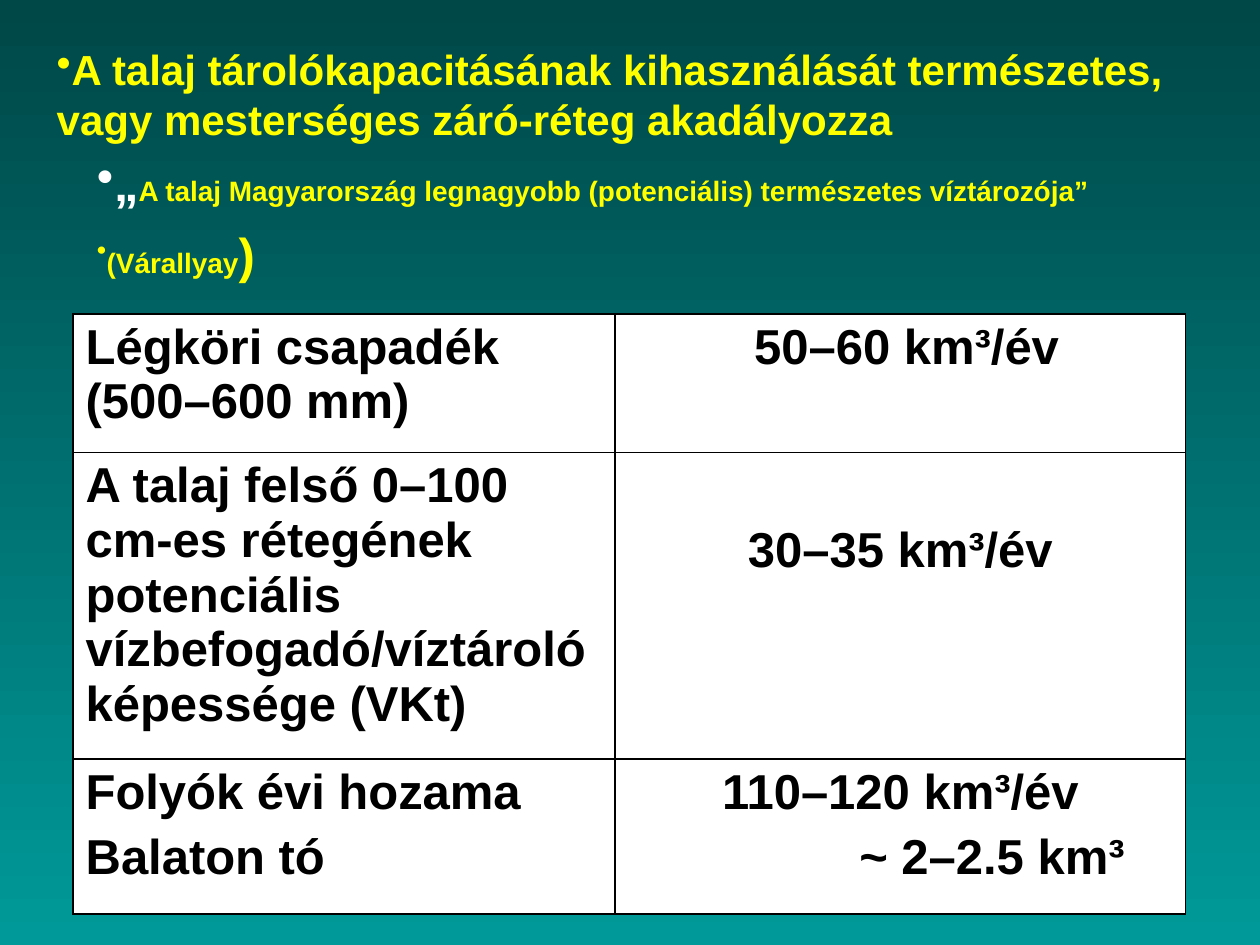
from lxml.etree import SubElement
from pptx import Presentation
from pptx.dml.color import RGBColor
from pptx.enum.text import MSO_ANCHOR as Anchor, MSO_AUTO_SIZE as AutoSize, PP_ALIGN as Align
from pptx.oxml.ns import qn
from pptx.util import Inches, Pt

COLORS = {
    "top": "004747",
    "bottom": "009999",
    "accent": "FFFF00",
    "white": "FFFFFF",
    "black": "000000",
}
FONT = "Arial"
BODY = {"size": 28, "color": "black"}
QUOTE = {"size": 16, "color": "accent"}


def rgb(name):
    return RGBColor.from_string(COLORS[name])


def add_run(paragraph, text, size, color):
    run = paragraph.add_run()
    run.text = text
    formats = {"name": FONT, "size": Pt(size), "bold": True}
    for attribute, value in formats.items():
        setattr(run.font, attribute, value)
    run.font.color.rgb = rgb(color)


def add_bullet(paragraph):
    """Put a bullet directly before the text, without a hanging indent."""
    properties = paragraph._p.get_or_add_pPr()
    properties.set("marL", "0")
    properties.set("indent", "0")
    SubElement(properties, qn("a:buChar"), char="•")


def paint_background(slide):
    fill = slide.background.fill
    fill.gradient()
    fill.gradient_angle = 270
    for stop, position, color in zip(fill.gradient_stops, (0, 1), ("top", "bottom")):
        stop.position = position
        stop.color.rgb = rgb(color)


def place_title(slide, text):
    title = slide.shapes.title
    title.left, title.top = Inches(0.35), Inches(0.29)
    title.width, title.height = Inches(9.65), Inches(0.91)
    frame = title.text_frame
    frame.auto_size = AutoSize.NONE
    frame.vertical_anchor = Anchor.MIDDLE
    paragraph = frame.paragraphs[0]
    add_bullet(paragraph)
    paragraph.alignment = Align.LEFT
    add_run(paragraph, text, 24, "accent")


def add_quote(slide, lines):
    box = slide.shapes.add_textbox(Inches(0.67), Inches(1.23), Inches(8.5), Inches(1))
    frame = box.text_frame
    frame.word_wrap = True
    frame.vertical_anchor = Anchor.MIDDLE
    for index, runs in enumerate(lines):
        paragraph = frame.add_paragraph() if index else frame.paragraphs[0]
        add_bullet(paragraph)
        if index:
            paragraph.space_before = Pt(7)
        for text, style in runs:
            add_run(paragraph, text, **style)


def add_borders(cell):
    properties = cell._tc.get_or_add_tcPr()
    for side in ("lnL", "lnR", "lnT", "lnB"):
        line = SubElement(properties, qn(f"a:{side}"), w=str(Pt(1)))
        fill = SubElement(line, qn("a:solidFill"))
        SubElement(fill, qn("a:srgbClr"), val=COLORS["black"])


def fill_cell(cell, lines, gap=5.6, align=Align.LEFT):
    add_borders(cell)
    cell.fill.solid()
    cell.fill.fore_color.rgb = rgb("white")
    for index, text in enumerate(lines):
        frame = cell.text_frame
        paragraph = frame.add_paragraph() if index else frame.paragraphs[0]
        paragraph.alignment = align
        if index:
            paragraph.space_before = Pt(gap)
        add_run(paragraph, text, **BODY)


def add_water_table(slide):
    widths, heights = (4.3, 4.53), (1.1, 2.27, 1.23)
    table = slide.shapes.add_table(
        len(heights), len(widths), Inches(0.58), Inches(2.49),
        Inches(sum(widths)), Inches(sum(heights))).table
    for column, width in zip(table.columns, widths):
        column.width = Inches(width)
    for row, height in zip(table.rows, heights):
        row.height = Inches(height)

    labels = [
        (["Légköri csapadék", "(500–600 mm)"], 0),
        (["A talaj felső 0–100 cm-es rétegének potenciális "
          "vízbefogadó/víztároló képessége (VKt)"], 0),
        (["Folyók évi hozama", "Balaton tó"], 5.6),
    ]
    amounts = [["50–60 km³/év"], ["30–35 km³/év"], ["110–120 km³/év", "~ 2–2.5 km³"]]
    for row, ((label, gap), amount) in enumerate(zip(labels, amounts)):
        fill_cell(table.cell(row, 0), label, gap)
        fill_cell(table.cell(row, 1), amount, align=Align.CENTER)

    table.cell(0, 1).margin_left = Inches(0.2)
    table.cell(1, 1).margin_top = Inches(0.56)
    lake = table.cell(2, 1).text_frame.paragraphs[1]
    lake.alignment = Align.LEFT
    lake._p.get_or_add_pPr().set("marL", str(Inches(1.84)))


def main():
    deck = Presentation()
    deck.slide_width, deck.slide_height = Inches(10), Inches(7.5)
    slide = deck.slides.add_slide(deck.slide_layouts[5])
    paint_background(slide)
    place_title(slide, "A talaj tárolókapacitásának kihasználását természetes, "
                       "vagy mesterséges záró-réteg akadályozza")
    add_quote(slide, [
        [("„", {"size": 28, "color": "white"}),
         ("A talaj Magyarország legnagyobb (potenciális) természetes víztározója”", QUOTE)],
        [("(Várallyay", QUOTE), (")", {"size": 28, "color": "accent"})],
    ])
    add_water_table(slide)
    deck.save("out.pptx")


if __name__ == "__main__":
    main()
